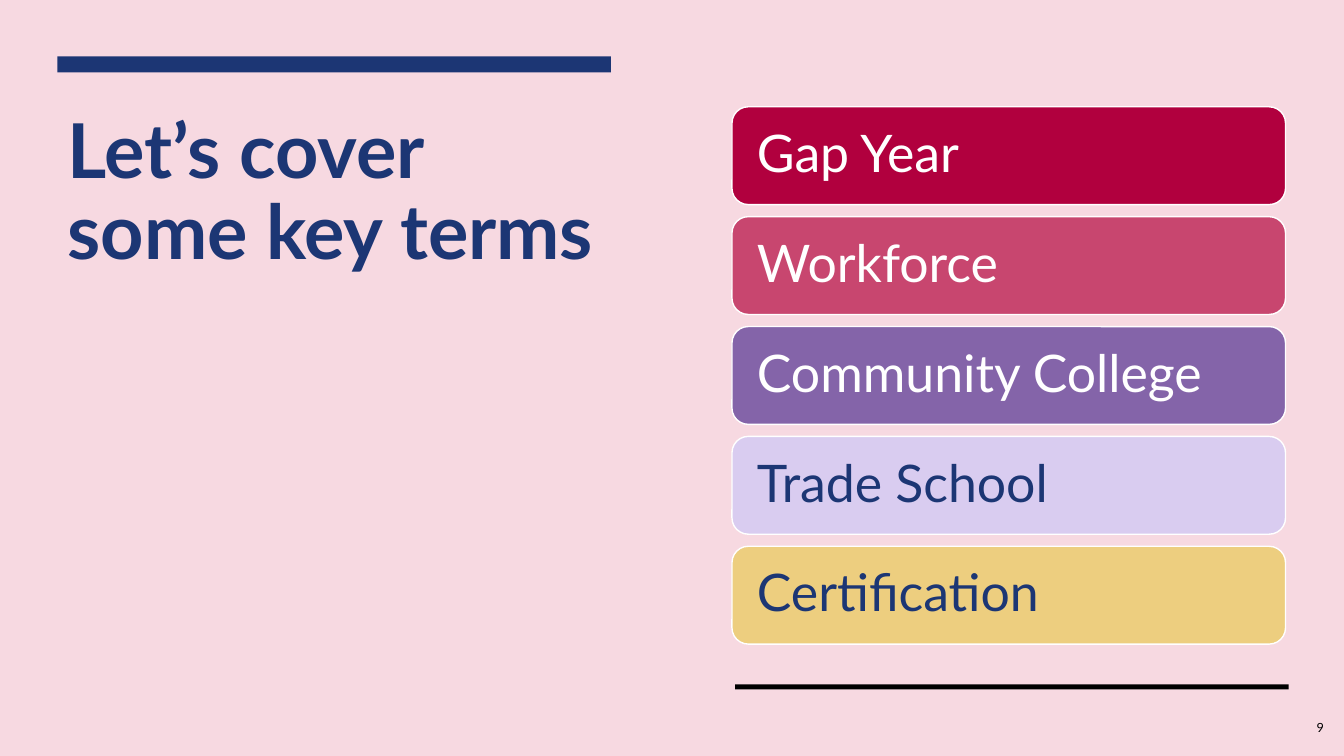
from pptx import Presentation
from pptx import util as u
from pptx.dml.color import RGBColor
from pptx.enum import shapes, text

NAVY, WHITE, BLACK, PINK = "1C3674", "FFFFFF", "000000", "F7D9E1"
TERMS = [
    ("Gap Year", "B1003E", WHITE),
    ("Workforce", "C8466F", WHITE),
    ("Community College", "8464A9", WHITE),
    ("Trade School", "D9CCF0", NAVY),
    ("Certification", "EDCE7F", NAVY),
]
COLUMN_WIDTH = 5.49
TERM_TOP, TERM_HEIGHT, TERM_STEP = 1.06, 0.97, 1.09


def paint(color_format, color):
    color_format.rgb = RGBColor.from_string(color)


def write(frame, words, size, color, bold=False, align=text.PP_ALIGN.LEFT,
          anchor=text.MSO_ANCHOR.MIDDLE, spacing=0.9, inset=(0.1, 0.05)):
    """Fill a text frame with one formatted paragraph; inset is (sides, top and bottom)."""
    frame.word_wrap = True
    frame.auto_size = text.MSO_AUTO_SIZE.NONE
    frame.vertical_anchor = anchor
    frame.margin_left = frame.margin_right = u.Inches(inset[0])
    frame.margin_top = frame.margin_bottom = u.Inches(inset[1])
    paragraph = frame.paragraphs[0]
    paragraph.alignment = align
    paragraph.line_spacing = spacing
    run = paragraph.add_run()
    run.text = words
    run.font.name = "Lato"
    run.font.size = u.Pt(size)
    run.font.bold = bold
    paint(run.font.color, color)


class KeyTermsSlide:
    def __init__(self, deck):
        self.slide = deck.slides.add_slide(deck.slide_layouts[5])
        background = self.slide.background.fill
        background.solid()
        paint(background.fore_color, PINK)

    def block(self, kind, left, top, width, height, fill, outline=None):
        shape = self.slide.shapes.add_shape(
            kind, u.Inches(left), u.Inches(top), u.Inches(width), u.Inches(height))
        shape.shadow.inherit = False
        shape.fill.solid()
        paint(shape.fill.fore_color, fill)
        if outline:
            paint(shape.line.color, outline)
            shape.line.width = u.Pt(1)
        else:
            shape.line.fill.background()
        return shape

    def bar(self, left, top, height, color):
        self.block(shapes.MSO_SHAPE.RECTANGLE, left, top, COLUMN_WIDTH, height, color)

    def title(self, words, left, top, width, height):
        heading = self.slide.shapes.title
        heading.left, heading.top = u.Inches(left), u.Inches(top)
        heading.width, heading.height = u.Inches(width), u.Inches(height)
        write(heading.text_frame, words, 54, NAVY, bold=True, anchor=text.MSO_ANCHOR.TOP)

    def term(self, words, top, fill, color):
        card = self.block(shapes.MSO_SHAPE.ROUNDED_RECTANGLE, 7.26, top,
                          COLUMN_WIDTH, TERM_HEIGHT, fill, outline=WHITE)
        write(card.text_frame, words, 37, color, inset=(0.2, 0.2))

    def page_number(self, number, left, top, width, height):
        corner = self.slide.shapes.add_textbox(
            u.Inches(left), u.Inches(top), u.Inches(width), u.Inches(height))
        write(corner.text_frame, number, 9, BLACK, align=text.PP_ALIGN.RIGHT, spacing=1.0)


def main():
    deck = Presentation()
    deck.slide_width, deck.slide_height = u.Inches(13.33), u.Inches(7.5)
    page = KeyTermsSlide(deck)
    page.bar(0.57, 0.56, 0.16, NAVY)
    page.bar(7.29, 6.79, 0.05, BLACK)
    page.title("Let’s cover some key terms", 0.57, 1.07, COLUMN_WIDTH, 1.93)
    for row, (words, fill, color) in enumerate(TERMS):
        page.term(words, TERM_TOP + row * TERM_STEP, fill, color)
    page.page_number("9", 12.53, 7.02, 0.7, 0.4)
    deck.save("out.pptx")


if __name__ == "__main__":
    main()
